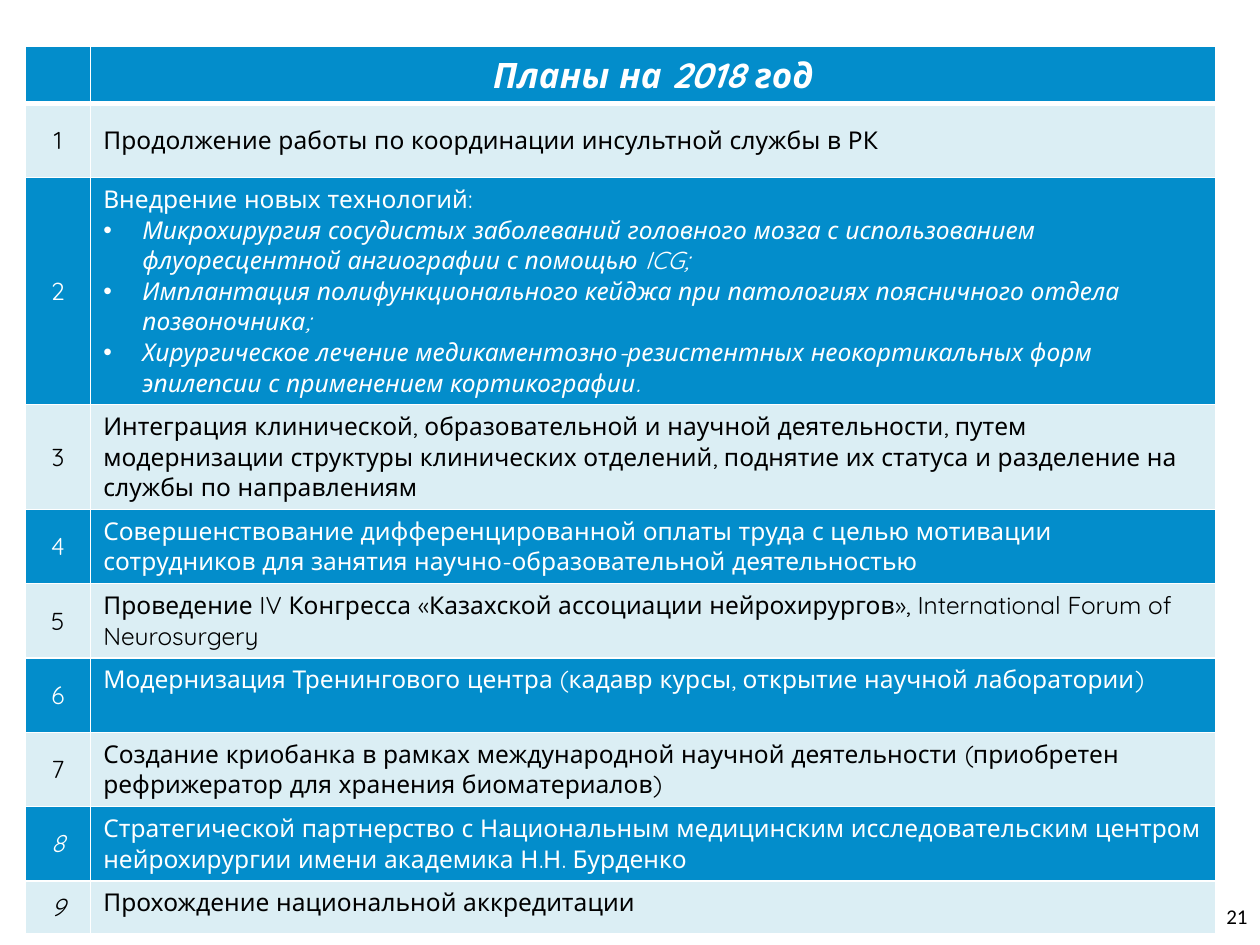
from lxml import etree
from pptx import Presentation
from pptx.dml.color import RGBColor
from pptx.enum.text import MSO_ANCHOR as Anchor, PP_ALIGN as Align
from pptx.oxml import parse_xml
from pptx.oxml.ns import nsdecls, qn
from pptx.util import Inches, Pt

COLORS = {"blue": "038DCB", "pale": "DBEEF4", "white": "FFFFFF", "black": "000000"}
FONT = "Quicksand"

# Content: each plan has a row height, a text and optional bullet points
HEADING = "Планы на 2018 год"
HEADING_HEIGHT = 0.44
PAGE_NUMBER = "21"
PLANS = [
    (0.59, "Продолжение работы по координации инсультной службы в РК", []),
    (1.79, "Внедрение новых технологий:", [
        "Микрохирургия сосудистых заболеваний головного мозга с использованием "
        "флуоресцентной ангиографии с помощью ICG;",
        "Имплантация полифункционального кейджа при патологиях поясничного отдела "
        "позвоночника;",
        "Хирургическое лечение медикаментозно-резистентных неокортикальных форм "
        "эпилепсии с применением кортикографии.",
    ]),
    (0.83, "Интеграция клинической, образовательной и научной деятельности, путем "
           "модернизации структуры клинических отделений, поднятие их статуса и "
           "разделение на службы по направлениям", []),
    (0.59, "Совершенствование дифференцированной оплаты труда с целью мотивации "
           "сотрудников для занятия научно-образовательной деятельностью", []),
    (0.59, "Проведение IV Конгресса «Казахской ассоциации нейрохирургов», "
           "International Forum of Neurosurgery", []),
    (0.59, "Модернизация Тренингового центра (кадавр курсы, открытие научной "
           "лаборатории)", []),
    (0.59, "Создание криобанка в рамках международной научной деятельности "
           "(приобретен рефрижератор для хранения биоматериалов)", []),
    (0.59, "Стратегической партнерство с Национальным медицинским исследовательским "
           "центром нейрохирургии имени академика Н.Н. Бурденко", []),
    (0.42, "Прохождение национальной аккредитации", []),
]
COLUMN_WIDTHS = [0.52, 8.93]
CENTERED_PLAN = 1
ITALIC_NUMBERS = (8, 9)


def write(para, text, size=14, font=FONT, color="black", bold=False, italic=False,
          align=Align.LEFT, bullet=False):
    para.alignment = align
    span = para.add_run()
    span.text = text
    span.font.size = Pt(size)
    span.font.name = font
    span.font.bold = bold
    span.font.italic = italic
    span.font.color.rgb = RGBColor.from_string(COLORS[color])
    if bullet:
        properties = para._p.get_or_add_pPr()
        properties.set("marL", str(Inches(0.31)))
        properties.set("indent", str(-Inches(0.31)))
        etree.SubElement(properties, qn("a:buFont"), typeface="Arial")
        etree.SubElement(properties, qn("a:buChar"), char="•")


def style_cell(cell, fill, top=1, bottom=1):
    cell.fill.solid()
    cell.fill.fore_color.rgb = RGBColor.from_string(COLORS[fill])
    borders = {"lnL": 1, "lnR": 1, "lnT": top, "lnB": bottom}
    for position, (side, width) in enumerate(borders.items()):
        cell._tc.get_or_add_tcPr().insert(position, parse_xml(
            f'<a:{side} {nsdecls("a")} w="{Pt(width)}"><a:solidFill>'
            f'<a:srgbClr val="{COLORS["white"]}"/></a:solidFill></a:{side}>'))


deck = Presentation()
deck.slide_width, deck.slide_height = Inches(10), Inches(7.5)
page = deck.slides.add_slide(deck.slide_layouts[6])

# Table of plans
heights = [HEADING_HEIGHT] + [plan[0] for plan in PLANS]
table = page.shapes.add_table(
    len(heights), len(COLUMN_WIDTHS), Inches(0.2), Inches(0.37),
    Inches(sum(COLUMN_WIDTHS)), Inches(sum(heights))).table
for column, width in zip(table.columns, COLUMN_WIDTHS):
    column.width = Inches(width)
for row, height in zip(table.rows, heights):
    row.height = Inches(height)

# Heading row
for cell in table.rows[0].cells:
    style_cell(cell, "blue", bottom=3)
write(table.cell(0, 1).text_frame.paragraphs[0], HEADING, size=20, color="white",
      bold=True, italic=True, align=Align.CENTER)

# Numbered rows in alternating colours
for number, (_, text, points) in enumerate(PLANS, start=1):
    fill, ink = ("pale", "black") if number % 2 else ("blue", "white")
    number_cell, plan_cell = table.rows[number].cells
    for cell in (number_cell, plan_cell):
        style_cell(cell, fill, top=3 if number == 1 else 1)
    number_cell.vertical_anchor = Anchor.MIDDLE
    if number == CENTERED_PLAN:
        plan_cell.vertical_anchor = Anchor.MIDDLE
    write(number_cell.text_frame.paragraphs[0], str(number), color=ink,
          italic=number in ITALIC_NUMBERS, align=Align.CENTER)
    write(plan_cell.text_frame.paragraphs[0], text, color=ink)
    for point in points:
        write(plan_cell.text_frame.add_paragraph(), point, color=ink, italic=True,
              bullet=True)

# Page number
box = page.shapes.add_textbox(Inches(7.67), Inches(7.07), Inches(2.33), Inches(0.4))
box.text_frame.word_wrap = True
box.text_frame.vertical_anchor = Anchor.MIDDLE
write(box.text_frame.paragraphs[0], PAGE_NUMBER, size=12, font="Calibri",
      align=Align.RIGHT)

deck.save("out.pptx")
